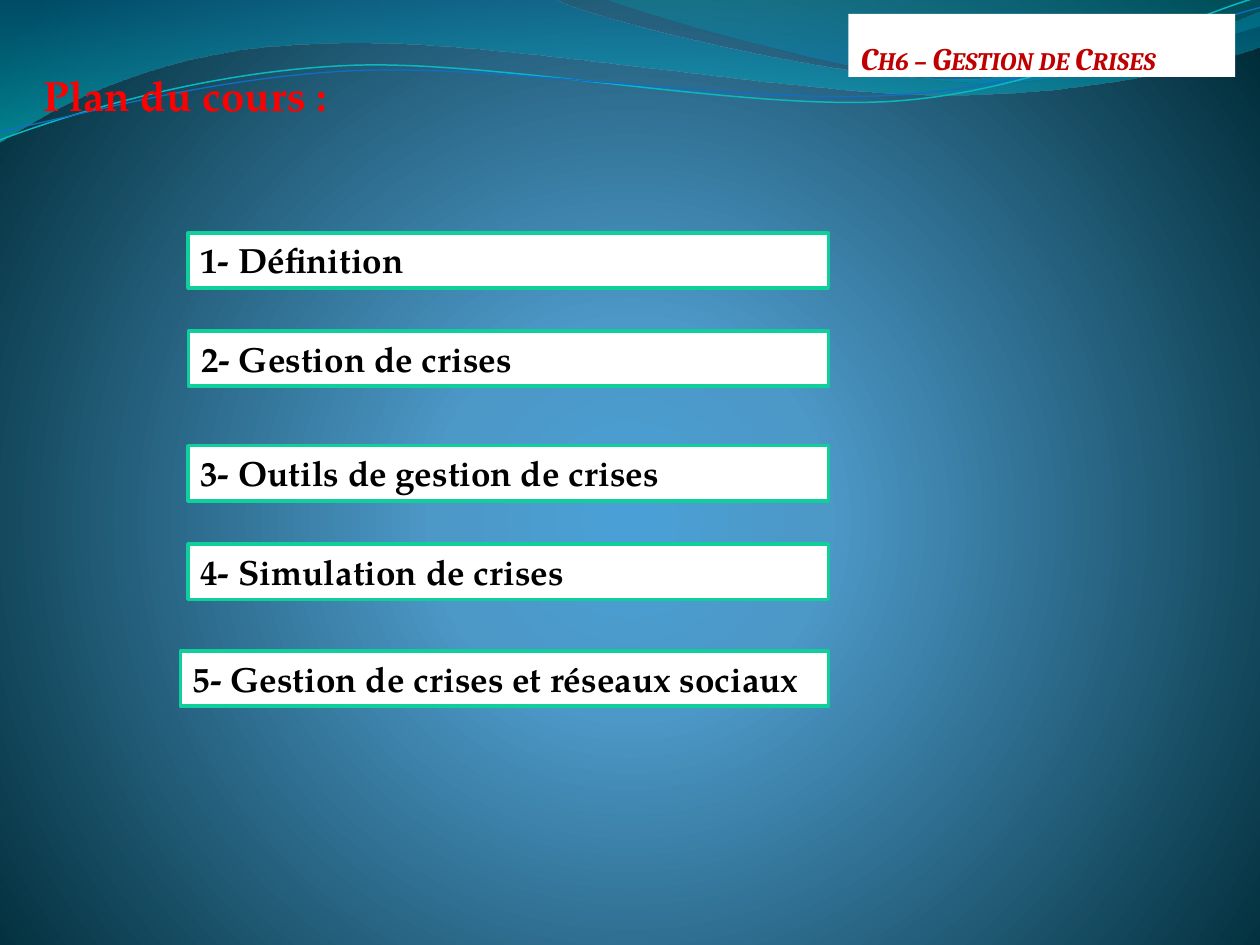
import pptx
import pptx.dml.color
import pptx.enum.shapes
import pptx.enum.text
import pptx.oxml
import pptx.oxml.ns
import pptx.util

Pt = pptx.util.Pt
qn = pptx.oxml.ns.qn


def color(value):
    return pptx.dml.color.RGBColor.from_string(value)


def write_text(shape, text, font="TeX Gyre Pagella", size=20, fill="000000",
               italic=None, small_caps=False, line_spacing=None):
    frame = shape.text_frame
    frame.word_wrap = True
    frame.auto_size = pptx.enum.text.MSO_AUTO_SIZE.SHAPE_TO_FIT_TEXT
    frame.vertical_anchor = pptx.enum.text.MSO_ANCHOR.TOP
    paragraph = frame.paragraphs[0]
    paragraph.alignment = pptx.enum.text.PP_ALIGN.LEFT
    paragraph.line_spacing = line_spacing
    run = paragraph.add_run()
    run.text = text
    run.font.name = font
    run.font.size = Pt(size)
    run.font.bold = True
    run.font.italic = italic
    run.font.color.rgb = color(fill)
    if small_caps:
        run.font._element.set("cap", "small")


def set_gradient(fill, parent, stops, direction):
    fill.gradient()
    stop_xml = ""
    for position, value, opacity in stops:
        alpha = f'<a:alpha val="{opacity * 1000}"/>' if opacity < 100 else ""
        stop_xml += (f'<a:gs pos="{position * 1000}">'
                     f'<a:srgbClr val="{value}">{alpha}</a:srgbClr></a:gs>')
    parent.replace(parent.find(qn("a:gradFill")), pptx.oxml.parse_xml(
        f'<a:gradFill {pptx.oxml.ns.nsdecls("a")} rotWithShape="1">'
        f'<a:gsLst>{stop_xml}</a:gsLst>{direction}</a:gradFill>'))


def bend_segments(shape, segments):
    lines = iter(list(shape.element.iter(qn("a:lnTo"))))
    for segment in segments:
        line = next(lines)
        if len(segment) == 6:
            curve = pptx.oxml.parse_xml(
                f'<a:cubicBezTo {pptx.oxml.ns.nsdecls("a")}/>')
            line.addprevious(curve)
            for control in (line, next(lines), next(lines)):
                curve.append(control[0])
                control.getparent().remove(control)


class SlideBuilder:
    box_line = "10CF9B"
    box_fill = "FFFFFF"
    wave_tilt = 357.3
    downward = '<a:lin ang="5400000" scaled="1"/>'
    radial = ('<a:path path="circle"><a:fillToRect l="10000" t="110000" '
              'r="10000" b="100000"/></a:path>')

    def __init__(self, slide):
        self.slide = slide

    def background(self, stops):
        fill = self.slide.background.fill
        properties = self.slide.element.find(".//" + qn("p:bgPr"))
        set_gradient(fill, properties, stops, self.radial)

    def outline(self, start, segments, closed):
        points = [(Pt(x), Pt(y)) for segment in segments
                  for x, y in zip(segment[::2], segment[1::2])]
        builder = self.slide.shapes.build_freeform(Pt(start[0]), Pt(start[1]))
        builder.add_line_segments(points, close=closed)
        shape = builder.convert_to_shape()
        bend_segments(shape, segments)
        shape.shadow.inherit = False
        return shape

    def wave(self, start, segments, stops):
        shape = self.outline(start, segments, True)
        shape.line.fill.background()
        set_gradient(shape.fill, shape.element.spPr, stops, self.downward)

    def curve(self, start, segments, line, width):
        shape = self.outline(start, segments, False)
        shape.rotation = self.wave_tilt
        shape.fill.background()
        shape.line.color.rgb = color(line)
        shape.line.width = Pt(width)

    def label(self, text, left, top, width, height, **style):
        shape = self.slide.shapes.add_textbox(Pt(left), Pt(top), Pt(width), Pt(height))
        write_text(shape, text, **style)

    def box(self, text, left, top, width, height, outlined=True, **style):
        shape = self.slide.shapes.add_shape(
            pptx.enum.shapes.MSO_SHAPE.RECTANGLE,
            Pt(left), Pt(top), Pt(width), Pt(height))
        shape.shadow.inherit = False
        shape.fill.solid()
        shape.fill.fore_color.rgb = color(self.box_fill)
        if outlined:
            shape.line.color.rgb = color(self.box_line)
            shape.line.width = Pt(2)
        else:
            shape.line.fill.background()
        write_text(shape, text, **style)


def main():
    presentation = pptx.Presentation()
    presentation.slide_width = Pt(720)
    presentation.slide_height = Pt(540)
    builder = SlideBuilder(presentation.slides.add_slide(presentation.slide_layouts[6]))

    builder.background([(0, "4AA0D6", 100), (25, "4C98C7", 100), (100, "002C38", 100)])
    builder.wave((0, 0), [
        (317, -0.5), (343, 12, 478, 45, 546, 45), (614, 45, 690, 19, 720, 6.5),
        (720.7, 26), (708, 32, 626, 55, 537, 54), (448, 54, 275, 20, 185, 24.5),
        (93, 26, 33, 60, -0.7, 81.3), (0, 0),
    ], [(0, "0074A1", 45), (100, "00C6CF", 55)])
    builder.wave((345, -0.5), [
        (366.5, 8, 491, 44.6, 553.7, 46.8), (616.3, 49.7, 692, 23, 720, 15),
        (720, 0), (345, -0.5),
    ], [(0, "00A1A9", 30), (80, "008BBF", 45)])
    builder.curve((-1.4, 63), [
        (33.8, 51.7, 114.1, 29.4, 199.8, 29.9),
        (284.9, 30.3, 425.8, 67.3, 512.4, 64.9),
        (599, 62.4, 676.4, 25.7, 720.2, 15.5),
    ], "0AB8BF", 0.85)
    builder.curve((-1.1, 58), [
        (32.9, 53.8, 118.2, 32.5, 204.1, 33),
        (290.6, 33.4, 428.9, 63.8, 515.5, 61.4),
        (601.3, 59.6, 678.4, 30.1, 721.4, 21.3),
    ], "0F6FC6", 0.75)

    builder.label("Plan du cours :", 18, 36, 535, 36, size=24, fill="FF0000")
    right = 473.4
    for text, left, top in (
        ("1- Définition", 107.5, 133),
        ("2- Gestion de crises", 107.8, 189.2),
        ("3- Outils de gestion de crises", 107.5, 254.7),
        ("4- Simulation de crises", 107.5, 311),
        ("5- Gestion de crises et réseaux sociaux", 103, 372),
    ):
        builder.box(text, left, top, right - left, 31.5)
    builder.box("Ch6 – Gestion de Crises", 484.8, 8, 221, 36, outlined=False,
                font="Cambria", size=18, fill="C00000", italic=True,
                small_caps=True, line_spacing=1.5)

    presentation.save("out.pptx")


if __name__ == "__main__":
    main()
